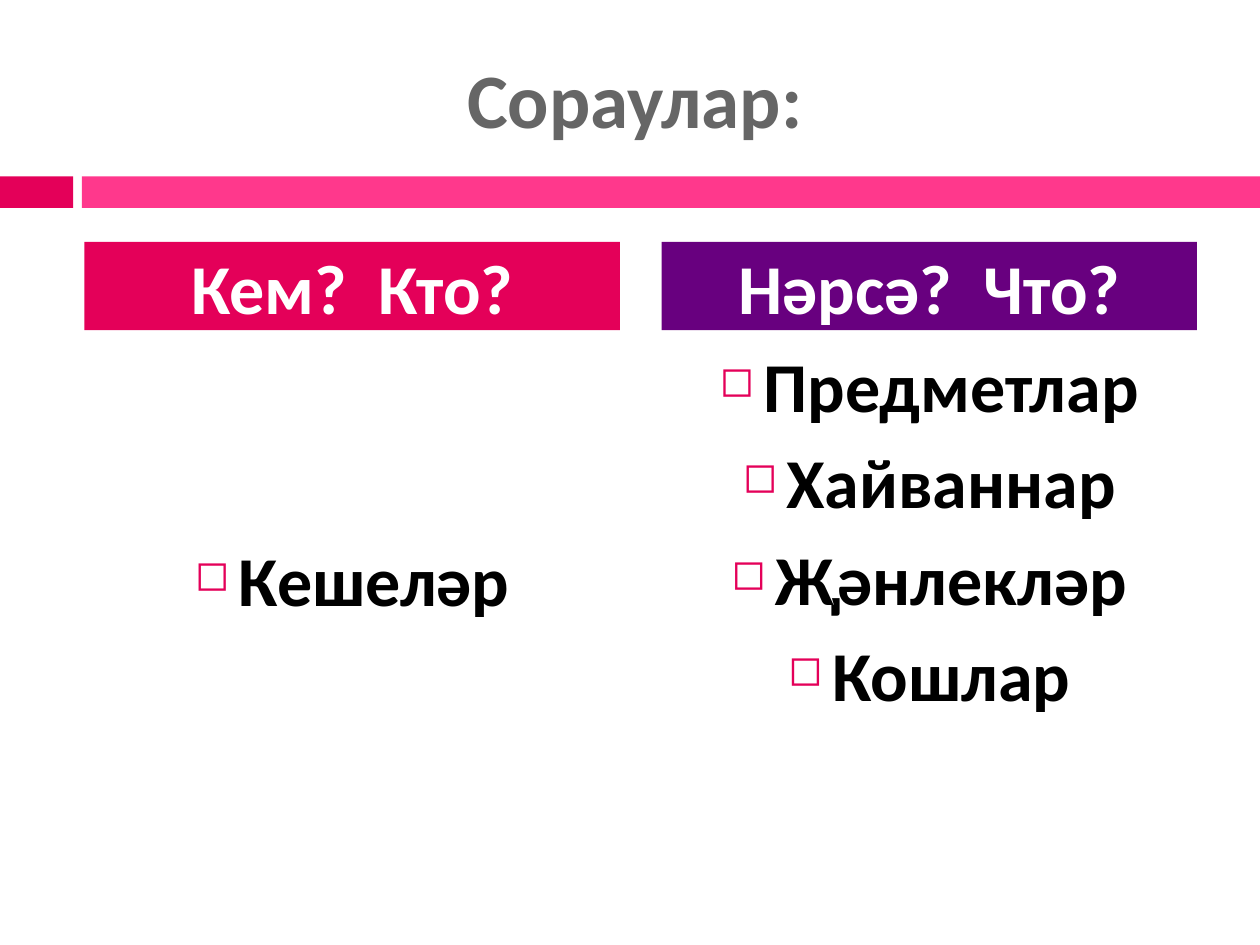
import pptx
import pptx.util
import pptx.dml.color
import pptx.enum.shapes
import pptx.enum.text
from lxml import etree
from pptx.oxml.ns import qn
from pptx.util import Inches

COLORS = {
    "crimson": "E40059",
    "pink": "FF388C",
    "purple": "68007F",
    "grey": "666666",
    "black": "000000",
    "white": "FFFFFF",
}
MIDDLE = pptx.enum.text.MSO_ANCHOR.MIDDLE
HEADING_HEIGHT = 0.7
LIST_OFFSET = 0.75
ROW_PITCH = 0.77


def rgb(name):
    return pptx.dml.color.RGBColor.from_string(COLORS[name])


def add_bar(page, left, top, width, height, color):
    bar = page.shapes.add_shape(
        pptx.enum.shapes.MSO_SHAPE.RECTANGLE,
        Inches(left), Inches(top), Inches(width), Inches(height))
    bar.shadow.inherit = False
    bar.fill.solid()
    bar.fill.fore_color.rgb = rgb(color)
    bar.line.fill.background()
    return bar


def add_text_box(page, left, top, width, height):
    box = page.shapes.add_textbox(
        Inches(left), Inches(top), Inches(width), Inches(height))
    box.text_frame.word_wrap = True
    return box


def style_paragraph(para, size, color):
    para.alignment = pptx.enum.text.PP_ALIGN.CENTER
    para.font.name = "Calibri"
    para.font.size = pptx.util.Pt(size)
    para.font.bold = True
    para.font.color.rgb = rgb(color)


def add_bullet(para):
    props = para._p.get_or_add_pPr()
    props.set("marL", str(Inches(0.35)))
    props.set("indent", str(-Inches(0.35)))
    bullet_color = etree.SubElement(props, qn("a:buClr"))
    etree.SubElement(bullet_color, qn("a:srgbClr"), val=COLORS["crimson"])
    etree.SubElement(props, qn("a:buSzPct"), val="60000")
    etree.SubElement(props, qn("a:buChar"), char="◻")


def add_title(page, left, top, width, height, text):
    box = add_text_box(page, left, top, width, height)
    box.text_frame.vertical_anchor = MIDDLE
    para = box.text_frame.paragraphs[0]
    para.text = text
    style_paragraph(para, 44, "grey")


def add_divider(page, left, top, width, height):
    short, gap = 0.58, 0.07
    add_bar(page, left, top, short, height, "crimson")
    add_bar(page, left + short + gap, top, width - short - gap, height, "pink")


def add_heading(page, left, top, width, questions, color):
    bar = add_bar(page, left, top, width, HEADING_HEIGHT, color)
    bar.text_frame.vertical_anchor = MIDDLE
    para = bar.text_frame.paragraphs[0]
    style_paragraph(para, 40, "white")
    first, second = questions
    para.add_run().text = first
    gap = para.add_run()
    gap.text = " "
    gap._r.get_or_add_rPr().set("spc", "900")
    para.add_run().text = second


def add_column(page, left, top, width, height, questions, color, answers, first_row):
    shift = LIST_OFFSET + first_row * ROW_PITCH
    box = add_text_box(page, left, top + shift, width, height - shift)
    for index, answer in enumerate(answers):
        para = box.text_frame.paragraphs[0] if index == 0 else box.text_frame.add_paragraph()
        para.text = answer
        add_bullet(para)
        style_paragraph(para, 40, "black")
        if index:
            para.space_before = pptx.util.Pt(7)
    add_heading(page, left, top, width, questions, color)


def main():
    deck = pptx.Presentation()
    deck.slide_width = Inches(10)
    deck.slide_height = Inches(7.5)
    page = deck.slides.add_slide(deck.slide_layouts[6])
    add_divider(page, 0, 1.4, 10, 0.25)
    add_title(page, 0.58, 0.3, 8.92, 0.95, "Сораулар:")
    columns = [
        (("Кем?", "Кто?"), "crimson", ["Кешеләр"], 2),
        (("Нәрсә?", "Что?"), "purple",
         ["Предметлар", "Хайваннар", "Җәнлекләр", "Кошлар"], 0),
    ]
    width, gap = 4.25, 0.33
    for index, column in enumerate(columns):
        add_column(page, 0.67 + index * (width + gap), 1.92, width, 4.67, *column)
    deck.save("out.pptx")


if __name__ == "__main__":
    main()
